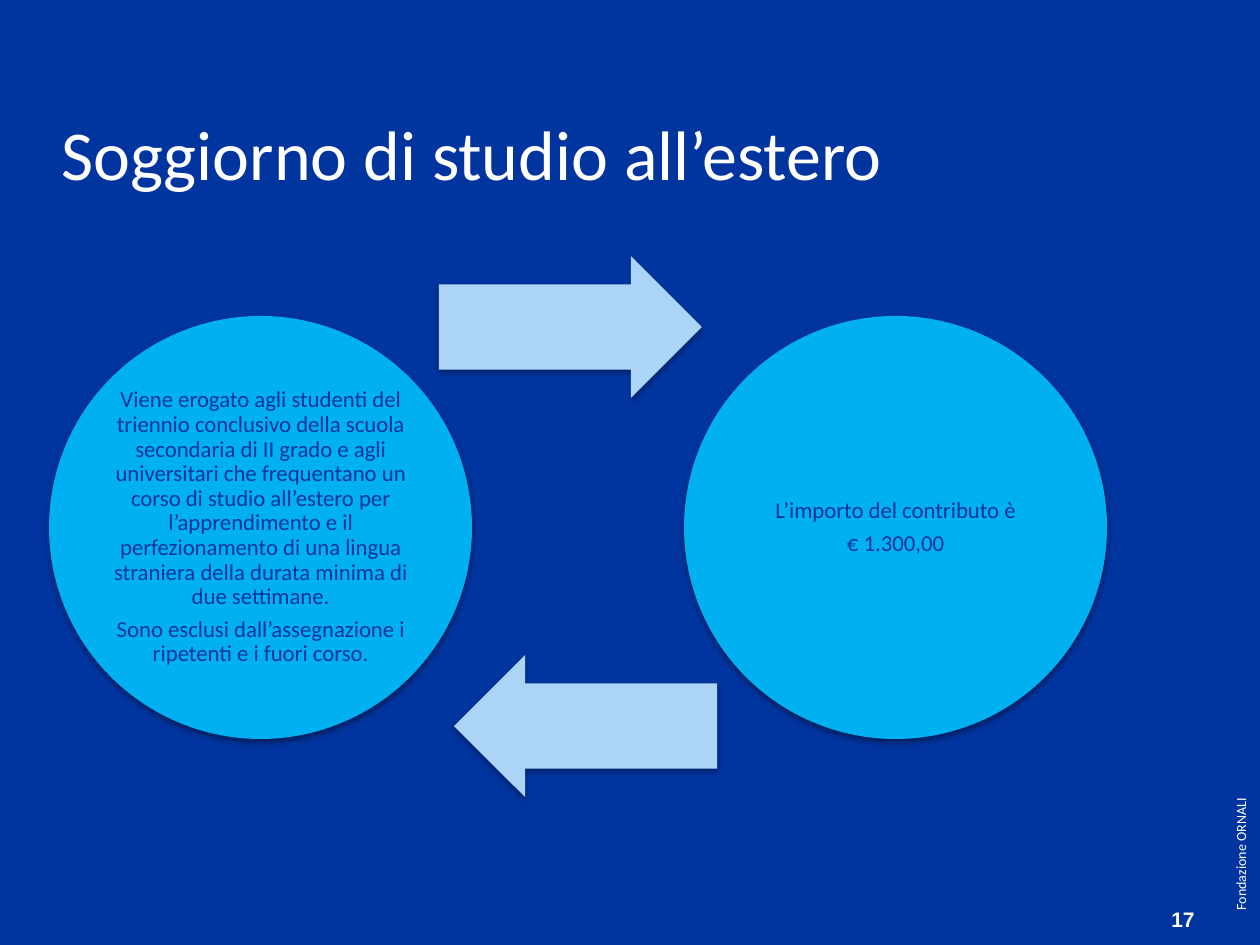
from lxml import etree
from pptx import Presentation, util as u
from pptx.dml.color import RGBColor
from pptx.enum import shapes, text
from pptx.oxml.ns import qn

PX = 914400 / 126

NAVY = RGBColor(0x00, 0x34, 0x9E)
CYAN = RGBColor(0x00, 0xB0, 0xF0)
PALE = RGBColor(0xAB, 0xD4, 0xF6)
WHITE = RGBColor(0xFF, 0xFF, 0xFF)

TITLE = "Soggiorno di studio all’estero"
OWNER = "Fondazione ORNALI"
NUMBER = "17"
CIRCLES = [
    ["Viene erogato agli studenti del triennio conclusivo della scuola secondaria "
     "di II grado e agli universitari che frequentano un corso di studio all’estero "
     "per l’apprendimento e il perfezionamento di una lingua straniera della durata "
     "minima di due settimane.",
     "Sono esclusi dall’assegnazione i ripetenti e i fuori corso."],
    ["L’importo del contributo è", "€ 1.300,00"],
]
ARROWS = [(439, 256, 0), (454, 655, 180)]  # left, top, rotation

LEFT, CIRCLE_TOP, DIAMETER, CIRCLE_STEP = 49, 316, 423, 635
LABEL_SIDE = 299
ARROW_WIDTH, ARROW_HEIGHT = 263, 142

MIDDLE, BOTTOM = text.MSO_ANCHOR.MIDDLE, text.MSO_ANCHOR.BOTTOM
BODY = {"size": u.Pt(13), "name": "Calibri", "color": NAVY}
HEADING = {"size": u.Pt(40), "name": "Calibri", "color": WHITE}
SIDE = {"size": u.Pt(8), "name": "Calibri", "color": WHITE}
PAGE_NUMBER = {"size": u.Pt(12), "name": "Arial", "bold": True, "color": WHITE}
CENTRED = {"alignment": text.PP_ALIGN.CENTER, "line_spacing": 0.9, "space_after": u.Pt(4.5)}


def px(*values):
    return [round(value * PX) for value in values]


def add_shadow(shape, opacity, distance):
    """Give the shape a soft black shadow straight below it; distance in points."""
    shape.shadow.inherit = False
    effects = shape._element.spPr.find(qn("a:effectLst"))
    shadow = etree.SubElement(effects, qn("a:outerShdw"), blurRad=str(u.Pt(3.1)),
                              dist=str(u.Pt(distance)), dir="5400000", rotWithShape="0")
    black = etree.SubElement(shadow, qn("a:srgbClr"), val="000000")
    etree.SubElement(black, qn("a:alpha"), val=str(opacity * 1000))


def add_block(page, kind, frame, fill, opacity, distance):
    shape = page.shapes.add_shape(kind, *px(*frame))
    shape.fill.solid()
    shape.fill.fore_color.rgb = fill
    shape.line.fill.background()
    add_shadow(shape, opacity, distance)
    return shape


def add_text(page, frame, lines, font, anchor=text.MSO_ANCHOR.TOP, layout=None, inset=None):
    box = page.shapes.add_textbox(*px(*frame))
    body = box.text_frame
    body.word_wrap = True
    body.vertical_anchor = anchor
    if inset is not None:
        for side in ("left", "top", "right", "bottom"):
            setattr(body, f"margin_{side}", u.Inches(inset))
    for index, line in enumerate(lines):
        para = body.paragraphs[0] if index == 0 else body.add_paragraph()
        for key, value in (layout or {}).items():
            setattr(para, key, value)
        span = para.add_run()
        span.text = line
        for key, value in font.items():
            if key == "color":
                span.font.color.rgb = value
            else:
                setattr(span.font, key, value)
    return box


def main():
    deck = Presentation()
    deck.slide_width, deck.slide_height = px(1260, 945)
    page = deck.slides.add_slide(deck.slide_layouts[6])
    page.background.fill.solid()
    page.background.fill.fore_color.rgb = NAVY

    add_text(page, (1023, 690, 436, 30), [OWNER], SIDE).rotation = 270

    margin = (DIAMETER - LABEL_SIDE) / 2
    for index, lines in enumerate(CIRCLES):
        left = LEFT + index * CIRCLE_STEP
        add_block(page, shapes.MSO_SHAPE.OVAL, (left, CIRCLE_TOP, DIAMETER, DIAMETER),
                  CYAN, 38, 1.6)
        label = (left + margin, CIRCLE_TOP + margin, LABEL_SIDE, LABEL_SIDE)
        add_text(page, label, lines, BODY, MIDDLE, CENTRED, inset=0.02)

    for left, top, rotation in ARROWS:
        arrow = add_block(page, shapes.MSO_SHAPE.RIGHT_ARROW,
                          (left, top, ARROW_WIDTH, ARROW_HEIGHT), PALE, 35, 1.8)
        arrow.adjustments[0], arrow.adjustments[1] = 0.6, 0.5
        arrow.rotation = rotation

    add_text(page, (LEFT, 32, 1058, 169), [TITLE], HEADING, BOTTOM)
    add_text(page, (1086, 902, 121, 34), [NUMBER], PAGE_NUMBER, MIDDLE,
             {"alignment": text.PP_ALIGN.RIGHT})
    deck.save("out.pptx")


if __name__ == "__main__":
    main()
